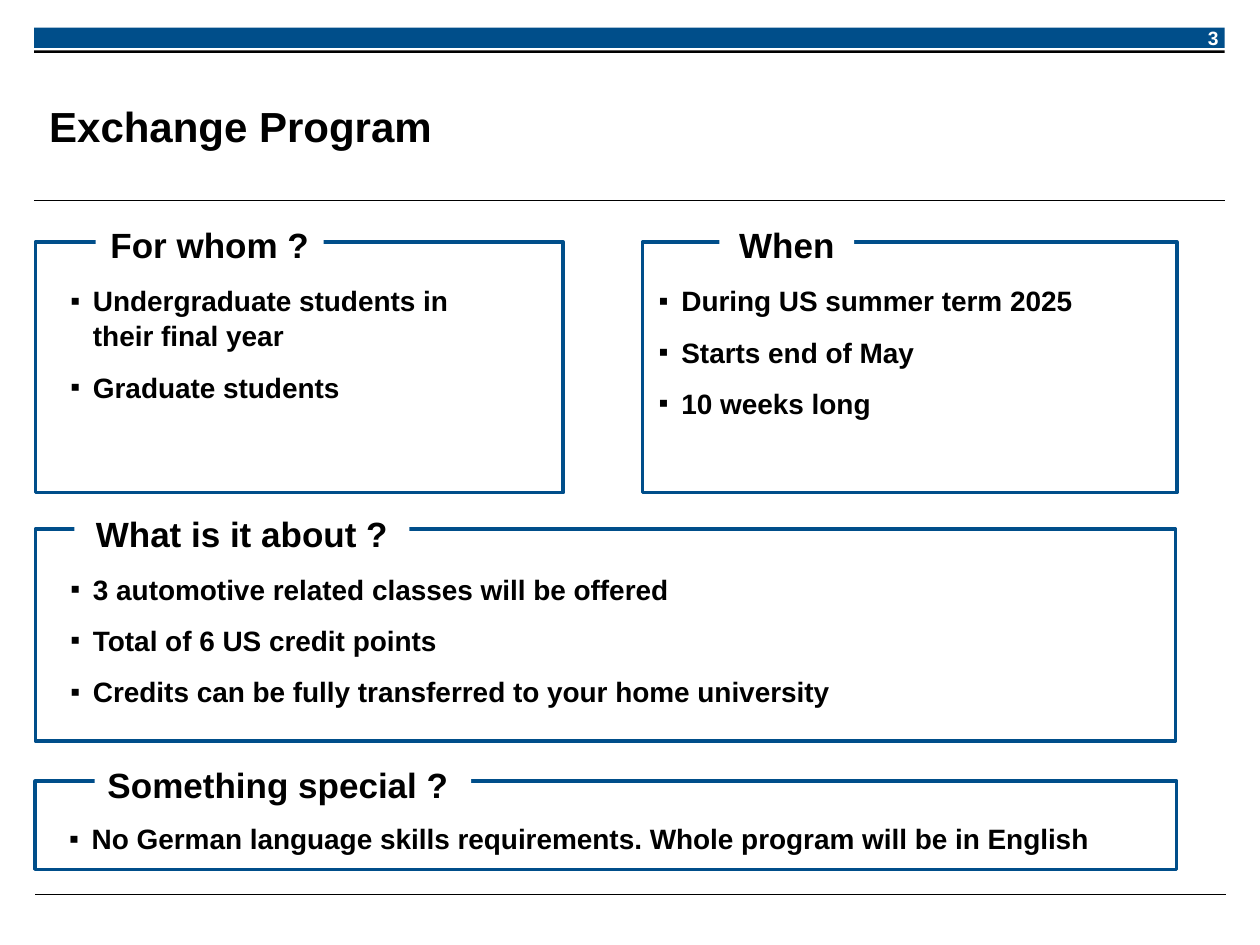
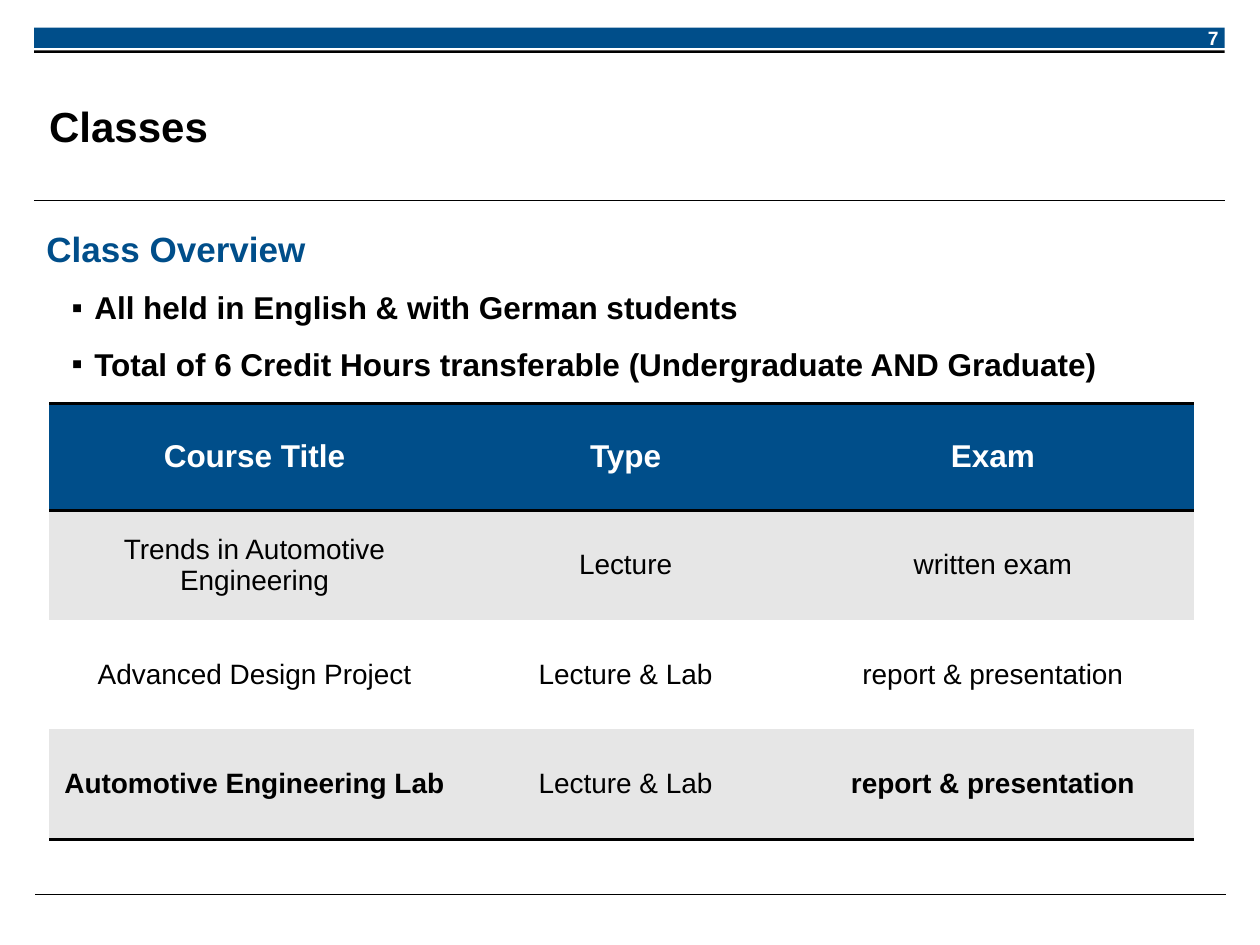
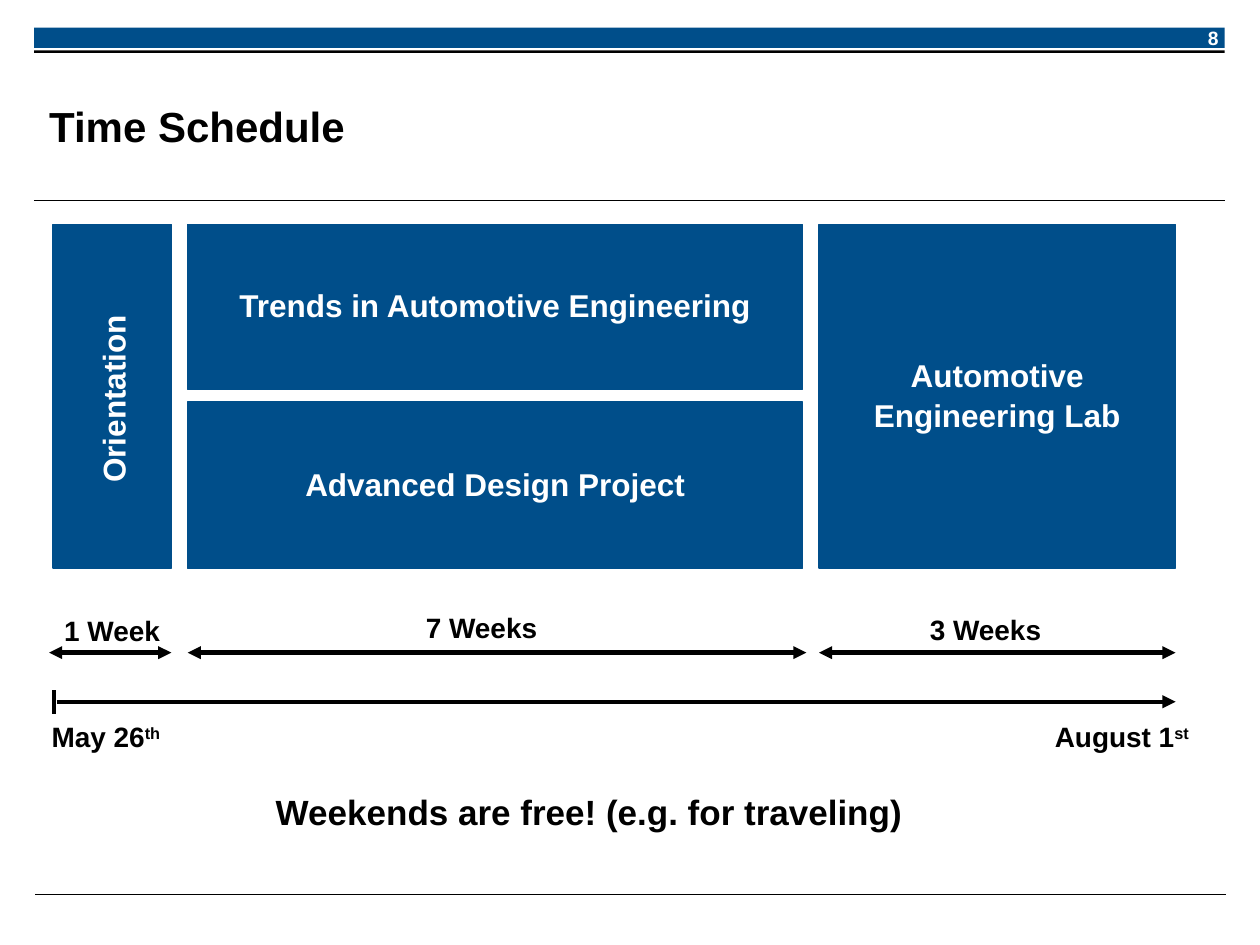
from lxml.etree import SubElement
from pptx import Presentation
from pptx.dml.color import RGBColor
from pptx.enum.shapes import MSO_CONNECTOR as Connector, MSO_SHAPE as Shape
from pptx.enum.text import MSO_ANCHOR as Anchor, PP_ALIGN as Align
from pptx.oxml.ns import qn
from pptx.util import Inches, Pt

BLUE, BLACK, WHITE, GREY = "004E8A", "000000", "FFFFFF", "E6E6E6"
FONT = "Arial"
LINE_SPACING = 1.05
NO_GRID_STYLE = "{2D5ABB26-0587-4C30-8999-92F81FD0307C}"
NO_INSETS = (0, 0, 0, 0)
LABEL_INSETS = (0.02, 0, 0.02, 0)
BLOCK_INSETS = (0.1, 0.01, 0.1, 0.05)


def rgb(hex_color):
    return RGBColor.from_string(hex_color)


def apply(target, values):
    for name, value in values.items():
        setattr(target, name, value)


def add_solid_fill(parent, color):
    SubElement(SubElement(parent, qn("a:solidFill")), qn("a:srgbClr"), val=color)


class Deck:
    def __init__(self):
        self.prs = Presentation()
        apply(self.prs, {"slide_width": Inches(10), "slide_height": Inches(7.5)})
        self.slide = None

    def new_slide(self, number, title):
        """Start a slide with the shared band, rules, number and title."""
        self.slide = self.prs.slides.add_slide(self.prs.slide_layouts[6])
        self.box((0.27, 0.22, 9.45, 0.16), BLUE)
        self.line((0.27, 1.59), (9.72, 1.59), 0.6)
        self.line((0.28, 7.1), (9.73, 7.1), 0.6)
        self.box((0.27, 0.4, 9.45, 0.02), BLACK)
        self.text((9.23, 0.15, 0.54, 0.29), number, 11, color=WHITE, align=Align.RIGHT)
        self.text((0.39, 0.53, 7.52, 0.92), title, 24, insets=NO_INSETS, anchor=Anchor.MIDDLE)

    def box(self, at, fill, outline=None, width=0.75):
        box = self.slide.shapes.add_shape(Shape.RECTANGLE, *map(Inches, at))
        box.shadow.inherit = False
        box.fill.solid()
        box.fill.fore_color.rgb = rgb(fill)
        if outline:
            box.line.color.rgb = rgb(outline)
            box.line.width = Pt(width)
        else:
            box.line.fill.background()
        return box

    def line(self, start, end, width, head=False, tail=False):
        ends = map(Inches, (*start, *end))
        line = self.slide.shapes.add_connector(Connector.STRAIGHT, *ends)
        line.line.color.rgb = rgb(BLACK)
        line.line.width = Pt(width)
        outline = line._element.spPr.find(qn("a:ln"))
        for tag, wanted in (("a:headEnd", head), ("a:tailEnd", tail)):
            if wanted:
                SubElement(outline, qn(tag), type="triangle")
        SubElement(line._element.spPr, qn("a:effectLst"))

    def text(self, at, content, size, **style):
        box = self.slide.shapes.add_textbox(*map(Inches, at))
        self.fill_frame(box.text_frame, content, size, **style)

    def fill_frame(self, frame, content, size, color=BLACK, align=Align.LEFT, after=0,
                   anchor=Anchor.TOP, insets=(0.1, 0.05, 0.1, 0.05), raised=""):
        left, top, right, bottom = map(Inches, insets)
        apply(frame, {"word_wrap": True, "vertical_anchor": anchor, "margin_left": left,
                      "margin_top": top, "margin_right": right, "margin_bottom": bottom})
        paragraph = frame.paragraphs[0]
        apply(paragraph, {"alignment": align, "space_after": Pt(after),
                          "line_spacing": LINE_SPACING})
        self.add_run(paragraph, content, size, color)
        if raised:
            run = self.add_run(paragraph, raised, size, color)
            run._r.get_or_add_rPr().set("baseline", "30000")

    def add_run(self, paragraph, content, size, color=BLACK, bold=True):
        run = paragraph.add_run()
        run.text = content
        apply(run.font, {"name": FONT, "size": Pt(size), "bold": bold})
        run.font.color.rgb = rgb(color)
        return run

    def bullets(self, at, items, size, heading=None):
        """Square bullets, below an unbulleted blue heading if there is one."""
        frame = self.slide.shapes.add_textbox(*map(Inches, at)).text_frame
        frame.word_wrap = True
        rows = [(item, size, BLACK) for item in items]
        if heading:
            rows.insert(0, (heading, 20, BLUE))
        for index, (content, points, color) in enumerate(rows):
            paragraph = frame.add_paragraph() if index else frame.paragraphs[0]
            if color == BLACK:
                properties = paragraph._p.get_or_add_pPr()
                properties.set("marL", str(Inches(0.38)))
                properties.set("indent", str(Inches(-0.18)))
                SubElement(properties, qn("a:buFont"), typeface=FONT)
                SubElement(properties, qn("a:buChar"), char="▪")
            apply(paragraph, {"space_before": Pt(0.2 * points if index else 0),
                              "space_after": Pt(6), "line_spacing": LINE_SPACING})
            self.add_run(paragraph, content, points, color)

    def panel(self, frame_at, heading_at, heading, bullets_at, items):
        """A framed list whose heading interrupts the top edge."""
        self.box(frame_at, WHITE, BLUE, 2)
        tab = self.box(heading_at, WHITE)
        self.fill_frame(tab.text_frame, heading, 20, align=Align.CENTER, anchor=Anchor.MIDDLE)
        self.bullets(bullets_at, items, 16)

    def block(self, at, content, insets=BLOCK_INSETS, upward=False):
        block = self.box(at, BLUE, BLUE)
        self.fill_frame(block.text_frame, content, 18, WHITE, Align.CENTER, 10,
                        Anchor.MIDDLE, insets)
        if upward:
            block.text_frame._txBody.bodyPr.set("vert", "vert270")

    def table(self, at, widths, heights, rows, bold_cells):
        shape = self.slide.shapes.add_table(len(rows), len(widths), *map(Inches, at))
        table = shape.table
        table._tbl.tblPr.find(qn("a:tableStyleId")).text = NO_GRID_STYLE
        for column, width in zip(table.columns, widths):
            column.width = Inches(width)
        for row, height in zip(table.rows, heights):
            row.height = Inches(height)
        for r, row in enumerate(rows):
            borders = {0: ("a:lnT", "a:lnB"), len(rows) - 1: ("a:lnB",)}.get(r, ())
            for c, content in enumerate(row):
                cell = table.cell(r, c)
                for tag in borders:
                    border = SubElement(cell._tc.get_or_add_tcPr(), qn(tag), w=str(Pt(2)))
                    add_solid_fill(border, BLACK)
                cell.fill.solid()
                cell.fill.fore_color.rgb = rgb(BLUE if r == 0 else GREY if r % 2 else WHITE)
                apply(cell, {"vertical_anchor": Anchor.MIDDLE,
                             "margin_left": Inches(0.12), "margin_right": Inches(0.12),
                             "margin_top": Inches(0.06), "margin_bottom": Inches(0.06)})
                paragraph = cell.text_frame.paragraphs[0]
                paragraph.alignment = Align.CENTER
                self.add_run(paragraph, content, 16 if r else 18, BLACK if r else WHITE,
                             r == 0 or (r, c) in bold_cells)


def exchange_program(deck):
    deck.new_slide("3", "Exchange Program")
    deck.panel((0.28, 1.92, 4.19, 1.99), (0.76, 1.7, 1.81, 0.47), "For whom ?",
               (0.26, 2.19, 3.9, 1.05),
               ["Undergraduate students in their final year", "Graduate students"])
    deck.panel((5.1, 1.92, 4.24, 1.99), (5.71, 1.7, 1.07, 0.47), "When",
               (4.93, 2.19, 3.93, 1.18),
               ["During US summer term 2025", "Starts end of May", "10 weeks long"])
    deck.panel((0.28, 4.2, 9.05, 1.68), (0.59, 3.99, 2.66, 0.47), "What is it about ?",
               (0.26, 4.48, 9.07, 1.18),
               ["3 automotive related classes will be offered",
                "Total of 6 US credit points",
                "Credits can be fully transferred to your home university"])
    deck.panel((0.28, 6.2, 9.06, 0.7), (0.75, 5.98, 2.99, 0.47), "Something special ? ",
               (0.25, 6.46, 8.76, 0.37),
               ["No German language skills requirements. Whole program will be in English"])


def classes(deck):
    deck.new_slide("7", "Classes")
    deck.bullets((0.27, 1.74, 9.45, 1.4),
                 ["All held in English & with German students",
                  "Total of 6 Credit Hours transferable (Undergraduate AND Graduate)"],
                 18, heading="Class Overview")
    deck.table((0.39, 3.2, 9.1, 3.46), (3.26, 2.63, 3.2), (0.85, 0.87, 0.87, 0.87),
               [("Course Title", "Type", "Exam"),
                ("Trends in Automotive Engineering", "Lecture", "written exam"),
                ("Advanced Design Project", "Lecture & Lab", "report & presentation"),
                ("Automotive Engineering Lab", "Lecture & Lab", "report & presentation")],
               bold_cells={(3, 0), (3, 2)})


def time_schedule(deck):
    deck.new_slide("8", "Time Schedule")
    deck.text((2.09, 6.21, 5.43, 0.44), "Weekends are free! (e.g. for traveling)", 20)

    deck.block((0.42, 1.78, 0.94, 2.73), "Orientation", (0.06, 0.08, 0.06, 0.04), upward=True)
    deck.block((1.49, 1.78, 4.88, 1.31), "Trends in Automotive Engineering")
    deck.block((6.5, 1.78, 2.83, 2.73), "Automotive Engineering Lab")
    deck.block((1.49, 3.19, 4.88, 1.32), "Advanced Design Project")

    label = {"insets": LABEL_INSETS, "after": 10}
    for start, end, label_at, duration in (
            (0.39, 1.36, (0.49, 4.86, 0.97, 0.31), "1 Week"),
            (1.49, 6.4, (3.36, 4.83, 1.48, 0.49), "7 Weeks"),
            (6.5, 9.33, (7.36, 4.85, 1.57, 0.49), "3 Weeks")):
        deck.line((start, 5.18), (end, 5.18), 2.5, head=True, tail=True)
        deck.text(label_at, duration, 16, **label)

    deck.line((0.45, 5.57), (9.33, 5.57), 2.5, tail=True)
    deck.line((0.43, 5.48), (0.43, 5.67), 2.5)
    deck.text((0.39, 5.7, 1.48, 0.49), "May 26", 16, raised="th", **label)
    deck.text((7.52, 5.7, 1.97, 0.49), "August 1", 16, raised="st ", align=Align.RIGHT, **label)


def main():
    deck = Deck()
    for build in (exchange_program, classes, time_schedule):
        build(deck)
    deck.prs.save("out.pptx")


if __name__ == "__main__":
    main()
